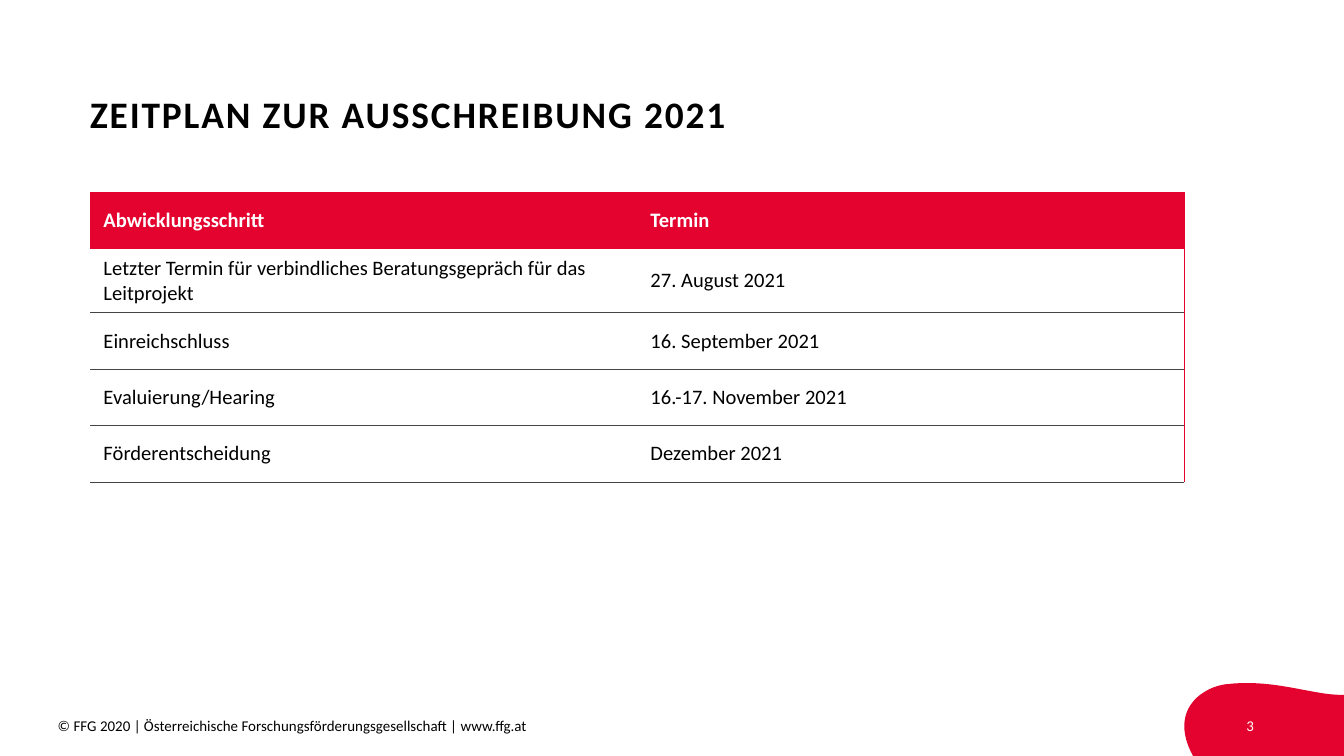
from lxml import etree
from pptx import Presentation
from pptx.dml.color import RGBColor
from pptx.enum.text import MSO_ANCHOR, PP_ALIGN
from pptx.oxml.ns import qn
from pptx.util import Inches, Pt

MIDDLE, TOP = MSO_ANCHOR.MIDDLE, MSO_ANCHOR.TOP
LEFT, RIGHT = PP_ALIGN.LEFT, PP_ALIGN.RIGHT
RED = RGBColor(0xE4, 0x03, 0x2E)
BLACK = RGBColor(0, 0, 0)
DARK = RGBColor(0x44, 0x44, 0x44)
WHITE = RGBColor(0xFF, 0xFF, 0xFF)
FONT = "Calibri"

TITLE = "ZEITPLAN ZUR AUSSCHREIBUNG 2021"
SCHEDULE = [
    ("Abwicklungsschritt", "Termin"),
    ("Letzter Termin für verbindliches Beratungsgepräch für das Leitprojekt", "27. August 2021"),
    ("Einreichschluss", "16. September 2021"),
    ("Evaluierung/Hearing", "16.-17. November 2021"),
    ("Förderentscheidung", "Dezember 2021"),
]
FOOTERS = [
    ("© FFG 2020 | Österreichische Forschungsförderungsgesellschaft | www.ffg.at",
     0.43, 4.76, LEFT, BLACK),
    ("3", 8.81, 0.52, RIGHT, WHITE),
]
BLOB_START = (9.14, 5.09)
BLOB_CURVES = [
    [(9.49, 5.05), (9.79, 5.18), (10, 5.17)],
    [(10, 5.33), (10, 5.47), (10.01, 5.63)],
    [(8.88, 5.63)] * 3,
    [(8.68, 5.27), (8.97, 5.1), BLOB_START],
]
CURVE_STEPS = 24
SLIDE_WIDTH = Inches(10)
SLIDE_HEIGHT = SLIDE_WIDTH * 9 // 16
MARGIN, ROW_HEIGHT, COLUMN_WIDTH = 0.67, 0.42, 4.07


def style(paragraph, size, color, bold=False):
    font = paragraph.font
    font.name, font.size, font.bold = FONT, Pt(size), bold
    font.color.rgb = color


def clear_insets(frame):
    frame.margin_left = frame.margin_right = frame.margin_top = frame.margin_bottom = 0
    frame.word_wrap = True


def bezier(points, t):
    weights = ((1 - t) ** 3, 3 * t * (1 - t) ** 2, 3 * t * t * (1 - t), t ** 3)
    return tuple(Inches(sum(w * p[axis] for w, p in zip(weights, points))) for axis in (0, 1))


def draw_border(cell, side, color):
    line = etree.SubElement(cell._tc.get_or_add_tcPr(), qn(f"a:ln{side}"), w=str(Pt(0.5)))
    if color is None:
        etree.SubElement(line, qn("a:noFill"))
    else:
        fill = etree.SubElement(line, qn("a:solidFill"))
        etree.SubElement(fill, qn("a:srgbClr"), val=str(color))


def add_blob(slide):
    outline = []
    start = BLOB_START
    for curve in BLOB_CURVES:
        outline += [bezier([start, *curve], i / CURVE_STEPS) for i in range(1, CURVE_STEPS + 1)]
        start = curve[-1]
    builder = slide.shapes.build_freeform(*(Inches(v) for v in BLOB_START))
    builder.add_line_segments(outline, close=True)
    blob = builder.convert_to_shape()
    blob.shadow.inherit = False
    blob.fill.solid()
    blob.fill.fore_color.rgb = RED
    blob.line.fill.background()


def add_title(slide):
    title = slide.shapes.title
    title.left, title.top = Inches(MARGIN), Inches(0.3)
    title.width, title.height = Inches(7.48), Inches(1.13)
    frame = title.text_frame
    frame.text = TITLE
    clear_insets(frame)
    frame.vertical_anchor = MIDDLE
    paragraph = frame.paragraphs[0]
    paragraph.alignment = LEFT
    paragraph.line_spacing = 0.9
    style(paragraph, 20, BLACK, True)
    paragraph.runs[0].font._element.set("spc", "100")


def add_schedule(slide):
    rows, columns = len(SCHEDULE), len(SCHEDULE[0])
    table = slide.shapes.add_table(
        rows, columns, Inches(MARGIN), Inches(1.43),
        Inches(COLUMN_WIDTH * columns), Inches(ROW_HEIGHT * rows)).table
    table.horz_banding = False
    for r, entries in enumerate(SCHEDULE):
        header = r == 0
        for c, entry in enumerate(entries):
            cell = table.cell(r, c)
            cell.text = entry
            cell.vertical_anchor = MIDDLE
            style(cell.text_frame.paragraphs[0], 11, WHITE if header else BLACK, header)
            draw_border(cell, "L", None)
            draw_border(cell, "R", RED if c == columns - 1 else None)
            draw_border(cell, "T", RED if r < 2 else DARK)
            draw_border(cell, "B", RED if header else DARK)
            if header:
                cell.fill.solid()
                cell.fill.fore_color.rgb = RED
            else:
                cell.fill.background()


def add_footers(slide):
    for text, left, width, alignment, color in FOOTERS:
        frame = slide.shapes.add_textbox(
            Inches(left), Inches(5.33), Inches(width), Inches(0.19)).text_frame
        clear_insets(frame)
        frame.vertical_anchor = TOP
        frame.text = text
        frame.paragraphs[0].alignment = alignment
        style(frame.paragraphs[0], 8, color)


def main():
    deck = Presentation()
    deck.slide_width, deck.slide_height = SLIDE_WIDTH, SLIDE_HEIGHT
    slide = deck.slides.add_slide(deck.slide_layouts[5])
    add_blob(slide)
    add_title(slide)
    add_schedule(slide)
    add_footers(slide)
    deck.save("out.pptx")


if __name__ == "__main__":
    main()
